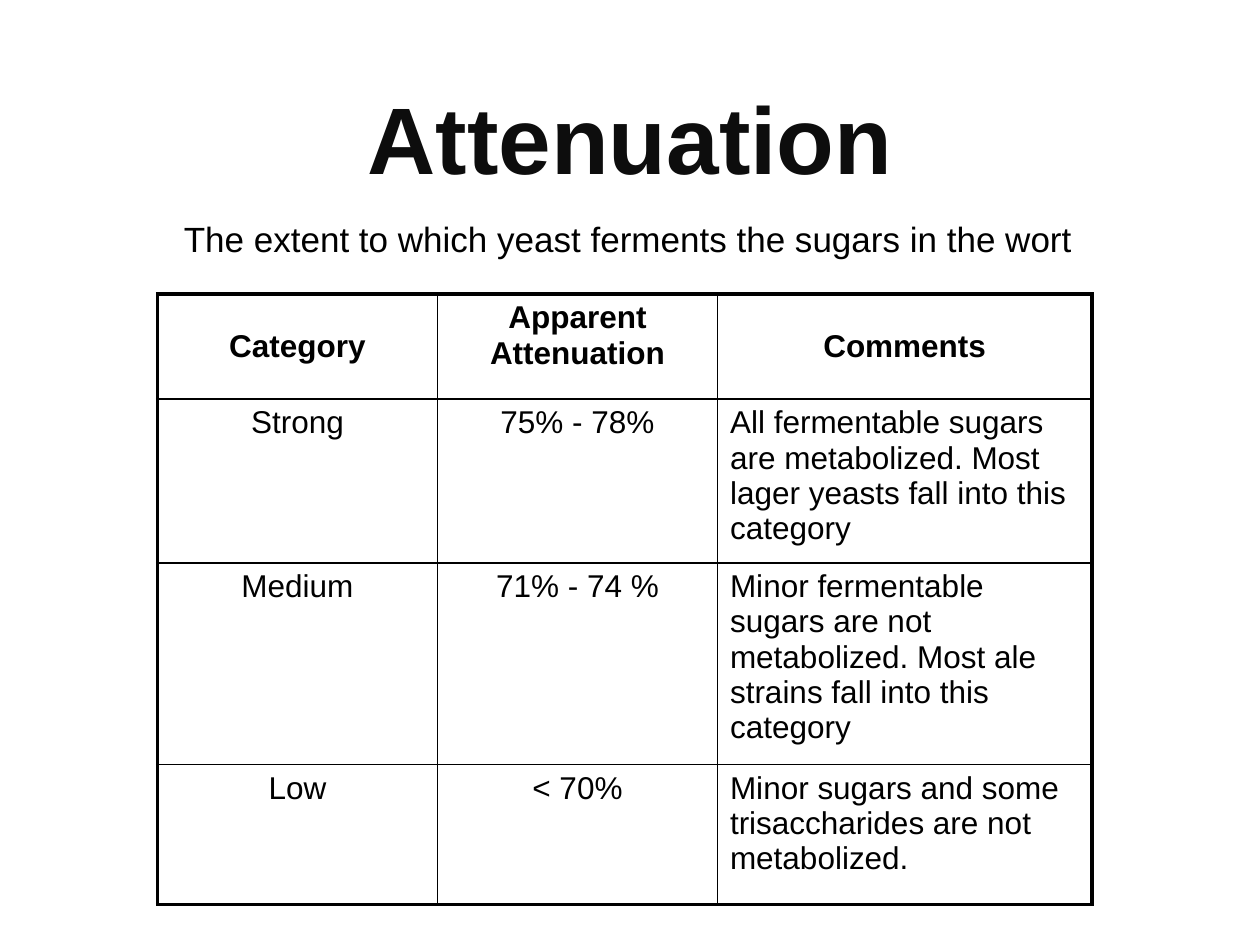
from dataclasses import dataclass

from lxml import etree
from pptx import Presentation
from pptx.dml.color import RGBColor
from pptx.enum.text import MSO_ANCHOR, PP_ALIGN
from pptx.oxml.ns import qn
from pptx.util import Pt

CENTER, LEFT = PP_ALIGN.CENTER, PP_ALIGN.LEFT
TOP, MIDDLE, BOTTOM = MSO_ANCHOR.TOP, MSO_ANCHOR.MIDDLE, MSO_ANCHOR.BOTTOM

TITLE = "Attenuation"
SUBTITLE = "The extent to which yeast ferments the sugars in the wort"
ROWS = [
    ("Category", "Apparent Attenuation", "Comments"),
    ("Strong", "75% - 78%",
     "All fermentable sugars are metabolized. Most lager yeasts fall into this category"),
    ("Medium", "71% - 74 %",
     "Minor fermentable sugars are not metabolized. Most ale strains fall into this category"),
    ("Low", "< 70%", "Minor sugars and some trisaccharides are not metabolized."),
]
COLUMN_WIDTHS = (160, 160, 214)
ROW_HEIGHTS = (60, 80, 80, 80)
TABLE_HEIGHT = 348.5


@dataclass(frozen=True)
class Theme:
    font: str = "Arial"
    title_color: str = "0D0D0D"
    ink: str = "000000"
    title_size: float = 54
    subtitle_size: float = 20
    table_size: float = 18
    outer_line: float = 2.25
    inner_line: float = 1


THEME = Theme()


def write_text(text_frame, text, size, color, bold=False, alignment=CENTER):
    """Fill a text frame with one formatted paragraph."""
    text_frame.text = text
    text_frame.word_wrap = True
    paragraph = text_frame.paragraphs[0]
    paragraph.alignment = alignment
    font = paragraph.runs[0].font
    font.name, font.size, font.bold = THEME.font, Pt(size), bold
    font.color.rgb = RGBColor.from_string(color)


def add_text_box(slide, bounds, anchor, *text_format):
    """Add a text box at the given bounds."""
    text_frame = slide.shapes.add_textbox(*map(Pt, bounds)).text_frame
    write_text(text_frame, *text_format)
    text_frame.vertical_anchor = anchor


def set_borders(cell, outer_sides):
    """Draw the four cell borders, heavier on the outer edge of the table."""
    properties = cell._tc.get_or_add_tcPr()
    for position, (side, is_outer) in enumerate(outer_sides.items()):
        width = THEME.outer_line if is_outer else THEME.inner_line
        line = etree.Element(qn(f"a:{side}"), w=str(Pt(width)))
        fill = etree.SubElement(line, qn("a:solidFill"))
        etree.SubElement(fill, qn("a:srgbClr"), val=THEME.ink)
        properties.insert(position, line)


def add_attenuation_table(slide):
    """Add the table of attenuation categories."""
    last_row, last_column = len(ROWS) - 1, len(COLUMN_WIDTHS) - 1
    frame = slide.shapes.add_table(
        len(ROWS), len(COLUMN_WIDTHS), Pt(90), Pt(168),
        Pt(sum(COLUMN_WIDTHS)), Pt(sum(ROW_HEIGHTS)))
    table = frame.table
    table.first_row = table.horz_banding = False
    for column, width in zip(table.columns, COLUMN_WIDTHS):
        column.width = Pt(width)
    for row, height in zip(table.rows, ROW_HEIGHTS):
        row.height = Pt(height)
    frame.height = Pt(TABLE_HEIGHT)
    for row_index, texts in enumerate(ROWS):
        is_header = row_index == 0
        for column_index, text in enumerate(texts):
            cell = table.cell(row_index, column_index)
            is_comment = column_index == last_column and not is_header
            write_text(cell.text_frame, text, THEME.table_size, THEME.ink,
                       is_header, LEFT if is_comment else CENTER)
            cell.vertical_anchor = MIDDLE if is_header and column_index != 1 else TOP
            cell.fill.background()
            set_borders(cell, {
                "lnL": column_index == 0,
                "lnR": column_index == last_column,
                "lnT": is_header,
                "lnB": row_index == last_row,
            })


def main():
    """Build the attenuation slide."""
    presentation = Presentation()
    presentation.slide_width, presentation.slide_height = Pt(720), Pt(540)
    slide = presentation.slides.add_slide(presentation.slide_layouts[6])
    add_text_box(slide, (24, 24, 672, 90), BOTTOM,
                 TITLE, THEME.title_size, THEME.title_color, True)
    add_text_box(slide, (74, 121, 570, 42), TOP,
                 SUBTITLE, THEME.subtitle_size, THEME.ink)
    add_attenuation_table(slide)
    presentation.save("out.pptx")


if __name__ == "__main__":
    main()
